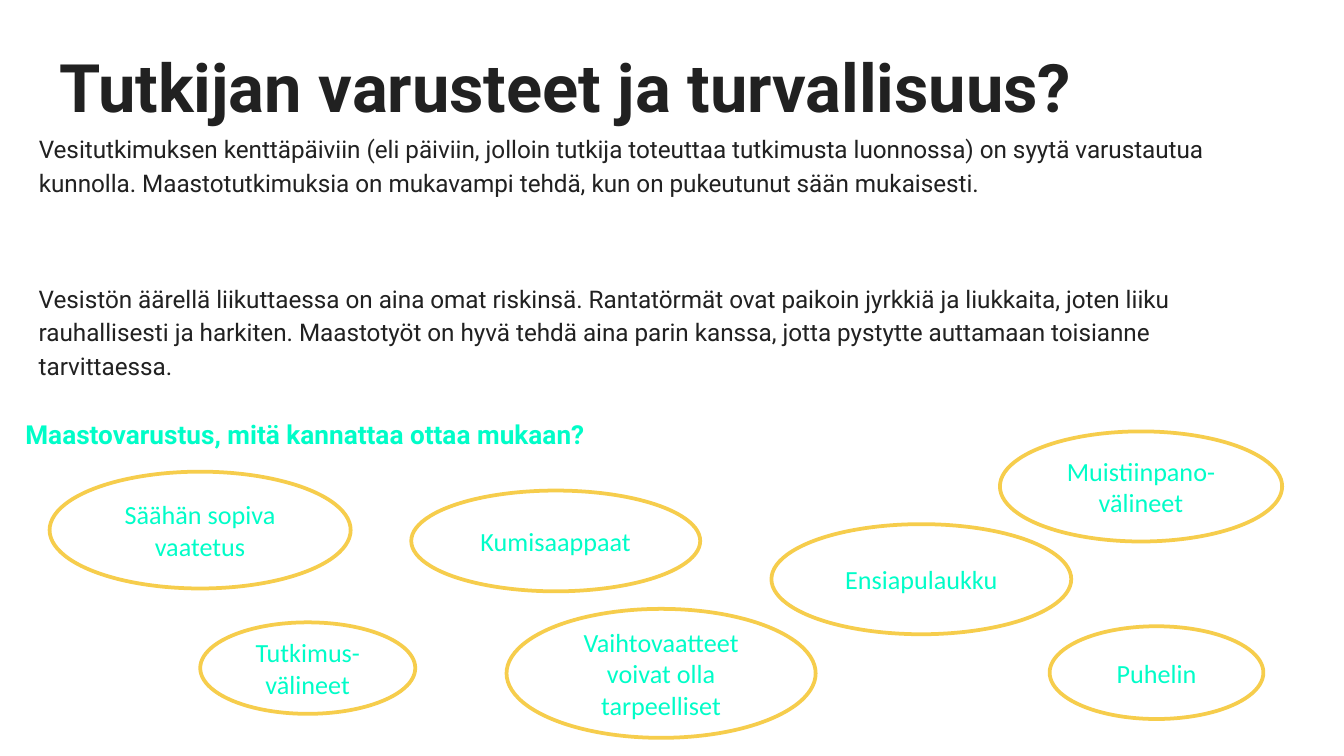
from pptx import Presentation
from pptx.dml.color import RGBColor
from pptx.enum.shapes import MSO_SHAPE
from pptx.enum.text import MSO_ANCHOR, PP_ALIGN
from pptx.util import Pt

OVAL = MSO_SHAPE.OVAL
TOP, MIDDLE = MSO_ANCHOR.TOP, MSO_ANCHOR.MIDDLE
LEFT, CENTER = PP_ALIGN.LEFT, PP_ALIGN.CENTER
WHITE = RGBColor(0xFF, 0xFF, 0xFF)
DARK = RGBColor(0x21, 0x21, 0x21)
MINT = RGBColor(0x00, 0xFD, 0xC8)
YELLOW = RGBColor(0xF6, 0xCD, 0x4C)

# Places are left, top, width, height in points.
TITLE = ("Tutkijan varusteet ja turvallisuus?", (24.5, 14.4, 671, 63.4))
CLOTHING = (
    "Vesitutkimuksen kenttäpäiviin (eli päiviin, jolloin tutkija toteuttaa "
    "tutkimusta luonnossa) on syytä varustautua kunnolla. Maastotutkimuksia on "
    "mukavampi tehdä, kun on pukeutunut sään mukaisesti.",
    (13.7, 62.6, 671, 61.2),
)
SAFETY = (
    "Vesistön äärellä liikuttaessa on aina omat riskinsä. Rantatörmät ovat "
    "paikoin jyrkkiä ja liukkaita, joten liiku rauhallisesti ja harkiten. "
    "Maastotyöt on hyvä tehdä aina parin kanssa, jotta pystytte auttamaan "
    "toisianne tarvittaessa.",
    (13.7, 142.6, 681.8, 101.5),
)
QUESTION = ("Maastovarustus, mitä kannattaa ottaa mukaan?", (6.5, 214.6, 376.6, 33.8))
EQUIPMENT = [
    ("Muistiinpano-välineet", (535.7, 231.1, 151.2, 59)),
    ("Kumisaappaat", (220.3, 262.8, 154.8, 54)),
    ("Tutkimus-välineet", (107.3, 333.4, 115.2, 49)),
    ("Vaihtovaatteet voivat olla tarpeelliset", (271.4, 326.2, 165.6, 69.1)),
    ("Säähän sopiva vaatetus", (26.6, 252.7, 161.3, 62.6)),
    ("Puhelin", (562.3, 335.5, 114.5, 49.7)),
    ("Ensiapulaukku", (413.3, 280.8, 160.6, 59)),
]

TITLE_FONT = {"name": "Roboto", "size": Pt(35.8), "bold": True}
BODY_FONT = {"name": "Roboto", "size": Pt(13), "bold": False}
QUESTION_FONT = {"name": "Roboto", "size": Pt(14), "bold": True}
OVAL_FONT = {"name": "Calibri", "size": Pt(14), "bold": False}
BODY_LINES = {"alignment": LEFT, "line_spacing": 1.15}


def write(box, text, font, color, para_format, anchor=TOP, inset=(7.2, 7.2)):
    """Fill a box with one paragraph; inset is the side and top margin."""
    frame = box.text_frame
    frame.word_wrap = True
    frame.vertical_anchor = anchor
    frame.margin_left = frame.margin_right = Pt(inset[0])
    frame.margin_top = frame.margin_bottom = Pt(inset[1])
    para = frame.paragraphs[0]
    for name, value in para_format.items():
        setattr(para, name, value)
    span = para.add_run()
    span.text = text
    for name, value in font.items():
        setattr(span.font, name, value)
    span.font.color.rgb = color


def points(place):
    return [Pt(length) for length in place]


deck = Presentation()
deck.slide_width, deck.slide_height = Pt(720), Pt(405)
page = deck.slides.add_slide(deck.slide_layouts[5])

text, place = TITLE
title = page.shapes.title
title.left, title.top, title.width, title.height = points(place)
write(title, text, TITLE_FONT, DARK, {"alignment": LEFT}, MIDDLE)

spaced = {**BODY_LINES, "space_before": Pt(12), "space_after": Pt(12)}
for (text, place), font, color, para_format in [
    (CLOTHING, BODY_FONT, DARK, spaced),
    (SAFETY, BODY_FONT, DARK, BODY_LINES),
    (QUESTION, QUESTION_FONT, MINT, BODY_LINES),
]:
    box = page.shapes.add_textbox(*points(place))
    write(box, text, font, color, para_format)

for text, place in EQUIPMENT:
    oval = page.shapes.add_shape(OVAL, *points(place))
    oval.shadow.inherit = False
    oval.fill.solid()
    oval.fill.fore_color.rgb = WHITE
    oval.line.color.rgb = YELLOW
    oval.line.width = Pt(2)
    write(oval, text, OVAL_FONT, MINT, {"alignment": CENTER}, MIDDLE, (7.2, 3.6))

deck.save("out.pptx")
